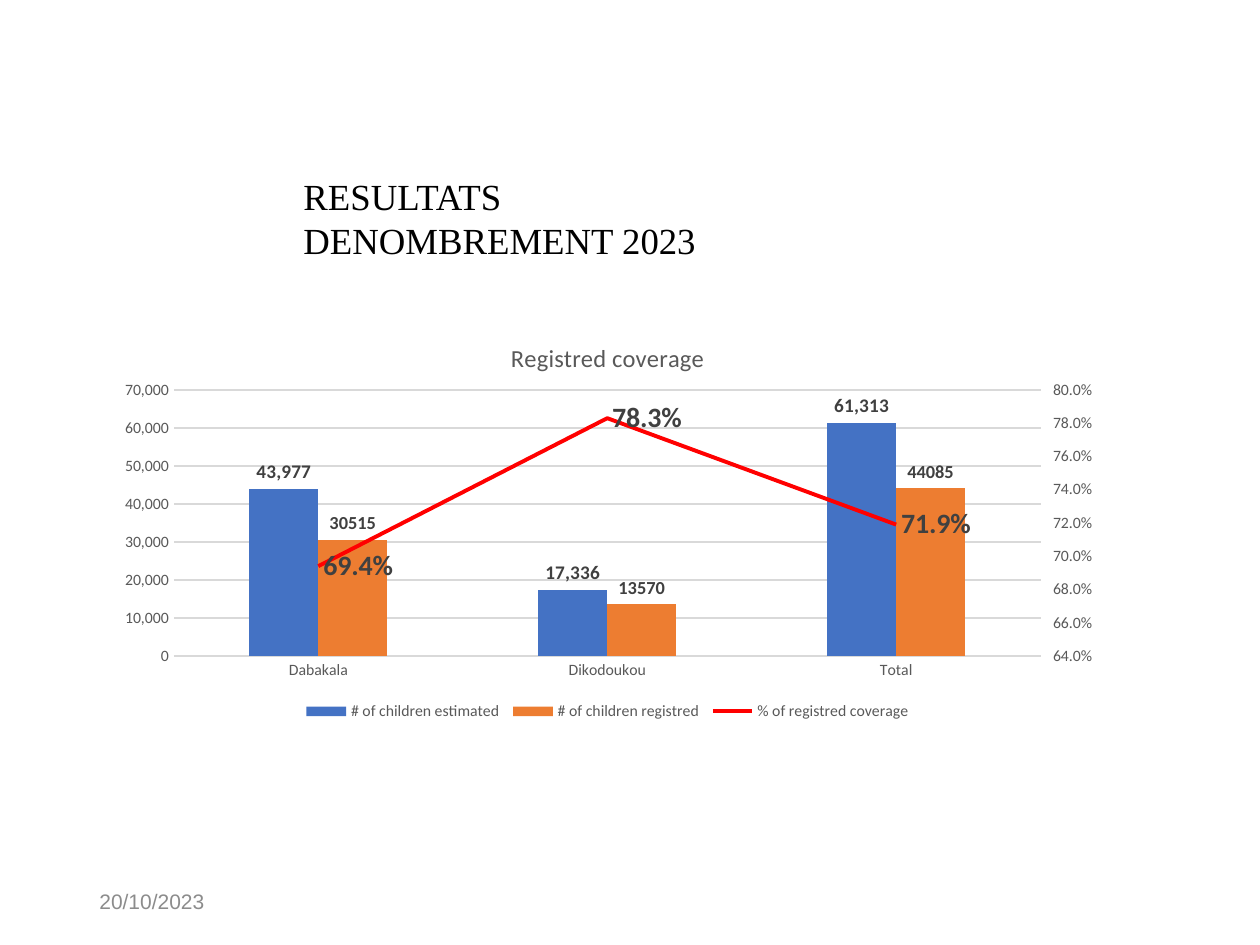
from copy import deepcopy

from pptx import Presentation, util as u
from pptx.chart import axis as ax, data
from pptx.dml.color import RGBColor
from pptx.enum import chart as ch, text
from pptx.oxml import parse_xml
from pptx.oxml.ns import nsdecls, qn

Inches, Pt = u.Inches, u.Pt

COLORS = {
    "title": "000000", "date": "8C8C8C", "axis": "595959", "label": "404040",
    "grid": "D9D9D9", "estimated": "4472C4", "registered": "ED7D31", "coverage": "FF0000",
}
CATEGORIES = ["Dabakala", "Dikodoukou", "Total"]
SERIES = [
    ("# of children estimated ", [43977, 17336, 61313], "#,##0"),
    ("# of children registred ", [30515, 13570, 44085], "General"),
    ("% of registred coverage", [0.694, 0.783, 0.719], "0.0%"),
]
LABEL_SIZES = [11, 10.5, 16]
RIGHT_CATEGORY_ID, RIGHT_VALUE_ID = "50010", "50020"


def rgb(name):
    return RGBColor.from_string(COLORS[name])


def set_attributes(target, values):
    for name, value in values.items():
        setattr(target, name, value)


def style_font(font, name, size, color, bold=False):
    set_attributes(font, {"name": name, "size": Pt(size), "bold": bold})
    font.color.rgb = rgb(color)


def style_line(line, color, width):
    line.color.rgb = rgb(color)
    line.width = Pt(width)


def remove_children(parent, tag):
    for child in parent.findall(qn(tag)):
        parent.remove(child)


def add_text(slide, box, wording, font, frame_format, alignment):
    frame = slide.shapes.add_textbox(*map(Inches, box)).text_frame
    set_attributes(frame, {"word_wrap": True, **frame_format})
    paragraph = frame.paragraphs[0]
    paragraph.alignment = alignment
    run = paragraph.add_run()
    run.text = wording
    style_font(run.font, *font)


def set_layout(parent, index, **fractions):
    """Place a chart part by fractions of the chart's width and height."""
    remove_children(parent, "c:layout")
    target = '<c:layoutTarget val="inner"/>' if "w" in fractions else ""
    modes = '<c:xMode val="edge"/><c:yMode val="edge"/>'
    values = "".join(f'<c:{key} val="{value}"/>' for key, value in fractions.items())
    parent.insert(index, parse_xml(
        f'<c:layout {nsdecls("c")}><c:manualLayout>{target}{modes}{values}'
        "</c:manualLayout></c:layout>"))


def style_axes(chart):
    for axis in (chart.category_axis, chart.value_axis):
        style_font(axis.tick_labels.font, "Calibri", 9, "axis")
        axis.major_tick_mark = axis.minor_tick_mark = ch.XL_TICK_MARK.NONE
    style_line(chart.category_axis.format.line, "grid", 0.75)
    value_axis = chart.value_axis
    set_attributes(value_axis, {"minimum_scale": 0, "maximum_scale": 70000, "major_unit": 10000})
    value_axis.format.line.fill.background()
    style_line(value_axis.major_gridlines.format.line, "grid", 0.75)
    set_attributes(value_axis.tick_labels, {"number_format": "#,##0",
                                            "number_format_is_linked": False})


def move_last_series_to_right_axis(plot_area):
    """Turn the last column series into a line on a second value axis."""
    bar_chart = plot_area.find(qn("c:barChart"))
    series = bar_chart.findall(qn("c:ser"))[-1]
    remove_children(series, "c:invertIfNegative")
    line_chart = parse_xml(
        f'<c:lineChart {nsdecls("c")}><c:grouping val="standard"/><c:varyColors val="0"/>'
        f'<c:marker val="1"/><c:axId val="{RIGHT_CATEGORY_ID}"/>'
        f'<c:axId val="{RIGHT_VALUE_ID}"/></c:lineChart>')
    line_chart.insert(2, series)
    bar_chart.addnext(line_chart)

    left_value = plot_area.find(qn("c:valAx"))
    right_category = deepcopy(plot_area.find(qn("c:catAx")))
    right_value = deepcopy(left_value)
    left_value.addnext(right_value)
    right_value.addnext(right_category)
    for element, own, other in ((right_category, RIGHT_CATEGORY_ID, RIGHT_VALUE_ID),
                                (right_value, RIGHT_VALUE_ID, RIGHT_CATEGORY_ID)):
        element.find(qn("c:axId")).set("val", own)
        element.find(qn("c:crossAx")).set("val", other)
    right_value.find(qn("c:axPos")).set("val", "r")
    remove_children(right_value, "c:crosses")
    right_value.find(qn("c:crossAx")).addnext(
        parse_xml(f'<c:crosses {nsdecls("c")} val="max"/>'))
    ax.CategoryAxis(right_category).visible = False
    axis = ax.ValueAxis(right_value)
    set_attributes(axis, {"has_major_gridlines": False, "minimum_scale": 0.64,
                          "maximum_scale": 0.8, "major_unit": 0.02,
                          "major_tick_mark": ch.XL_TICK_MARK.OUTSIDE})
    axis.tick_labels.number_format = "0.0%"


def style_series(chart):
    columns, line = chart.plots
    set_attributes(columns, {"gap_width": 219, "overlap": 0, "vary_by_categories": False})
    for series, color in zip(columns.series, ("estimated", "registered")):
        series.format.fill.solid()
        series.format.fill.fore_color.rgb = rgb(color)
    coverage = line.series[0]
    coverage.smooth = False
    coverage.marker.style = ch.XL_MARKER_STYLE.NONE
    style_line(coverage.format.line, "coverage", 2.25)
    outside, right = ch.XL_LABEL_POSITION.OUTSIDE_END, ch.XL_LABEL_POSITION.RIGHT
    all_series = [*columns.series, coverage]
    for series, (_, _, number_format), size, position in zip(
            all_series, SERIES, LABEL_SIZES, (outside, outside, right)):
        labels = series.data_labels
        set_attributes(labels, {"show_value": True, "number_format": number_format,
                                "number_format_is_linked": False, "position": position})
        style_font(labels.font, "Calibri", size, "label", True)


def add_coverage_chart(slide, box):
    chart_data = data.CategoryChartData()
    chart_data.categories = CATEGORIES
    for name, values, number_format in SERIES:
        chart_data.add_series(name, values, number_format)
    chart = slide.shapes.add_chart(
        ch.XL_CHART_TYPE.COLUMN_CLUSTERED, *map(Inches, box), chart_data).chart
    style_font(chart.font, "Calibri", 10, "title")

    chart.has_title = True
    paragraph = chart.chart_title.text_frame.paragraphs[0]
    run = paragraph.add_run()
    run.text = "Registred coverage"
    style_font(run.font, "Calibri", 14, "axis")

    chart.has_legend = True
    set_attributes(chart.legend, {"position": ch.XL_LEGEND_POSITION.BOTTOM,
                                  "include_in_layout": False})
    style_font(chart.legend.font, "Calibri", 9, "axis")

    style_axes(chart)
    plot_area = next(chart.element.iter(qn("c:plotArea")))
    move_last_series_to_right_axis(plot_area)
    style_series(chart)
    set_layout(plot_area, 0, x=0.07, y=0.18, w=0.86, h=0.65)
    set_layout(next(chart.element.iter(qn("c:title"))), 1, x=0.4, y=0.05)


def main():
    presentation = Presentation()
    presentation.slide_width, presentation.slide_height = Inches(10), Inches(7.5)
    slide = presentation.slides.add_slide(presentation.slide_layouts[6])
    add_text(slide, (0.69, 6.95, 2.25, 0.4), "20/10/2023", ("Arial", 12, "date"),
             {"vertical_anchor": text.MSO_ANCHOR.MIDDLE}, text.PP_ALIGN.LEFT)
    add_text(slide, (2.31, 1.33, 4.29, 0.81), "RESULTATS DENOMBREMENT 2023",
             ("Times New Roman", 21, "title"),
             {"auto_size": text.MSO_AUTO_SIZE.SHAPE_TO_FIT_TEXT}, text.PP_ALIGN.JUSTIFY)
    add_coverage_chart(slide, (0.82, 2.51, 8, 3.25))
    presentation.save("out.pptx")


if __name__ == "__main__":
    main()
